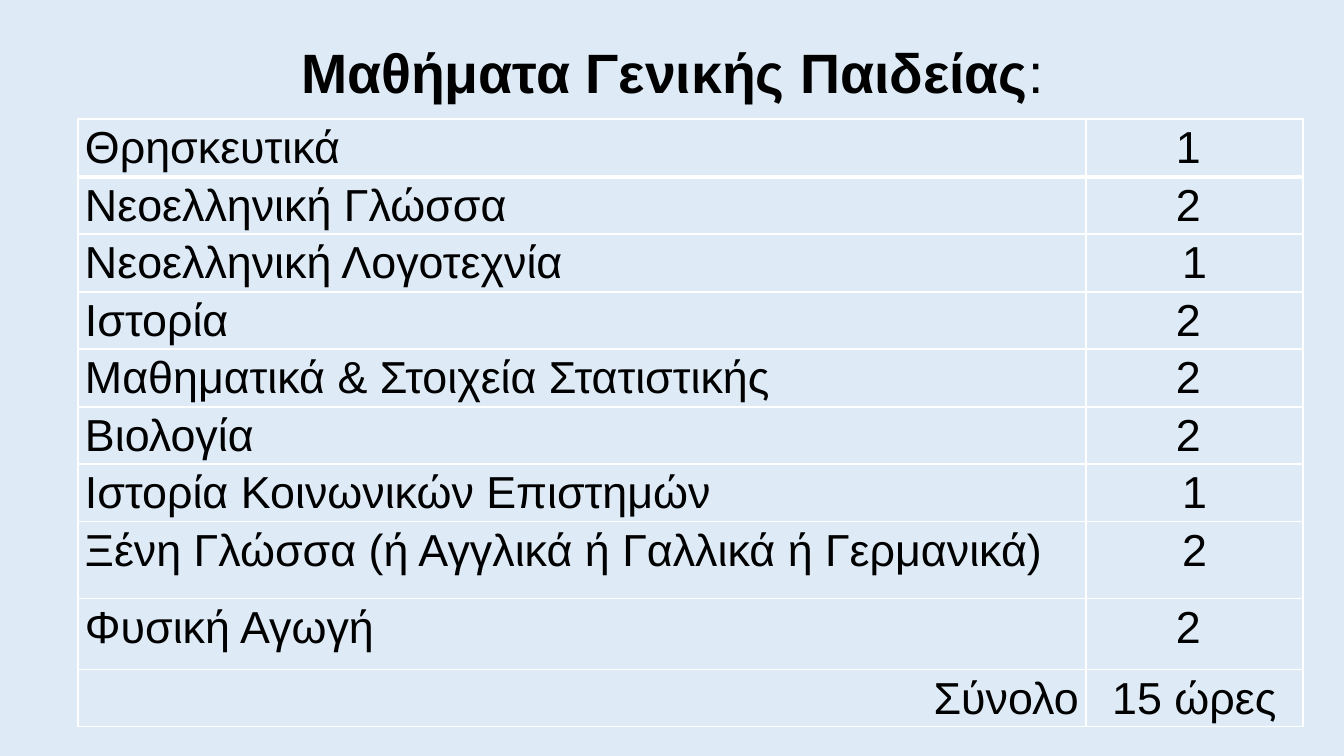
from dataclasses import dataclass

from lxml import etree
from pptx import Presentation
from pptx.dml.color import RGBColor
from pptx.enum.text import MSO_ANCHOR, MSO_AUTO_SIZE, PP_ALIGN
from pptx.oxml.ns import qn
from pptx.util import Emu, Pt

LEFT, CENTER, RIGHT = PP_ALIGN.LEFT, PP_ALIGN.CENTER, PP_ALIGN.RIGHT
MIDDLE = MSO_ANCHOR.MIDDLE
NO_AUTOFIT = MSO_AUTO_SIZE.NONE

SLIDE_W, SLIDE_H = 1344, 756
EMU_PER_PX = 12192000 / SLIDE_W

BACKGROUND = RGBColor(0xDE, 0xEB, 0xF7)
INK = RGBColor(0x00, 0x00, 0x00)
RULE = RGBColor(0xFF, 0xFF, 0xFF)
FONT = "Arial"

THIN, THICK = 1, 3
COLUMN_WIDTHS = (1008, 217)
CELL_INSET = 7


@dataclass
class Course:
    name: str
    hours: str
    height: int
    align: PP_ALIGN = LEFT


COURSES = [
    Course("Θρησκευτικά", "1 ", 58),
    Course("Νεοελληνική Γλώσσα", "2 ", 57),
    Course("Νεοελληνική Λογοτεχνία", "1", 58),
    Course("Ιστορία", "2 ", 57),
    Course("Μαθηματικά & Στοιχεία Στατιστικής", "2 ", 58),
    Course("Βιολογία", "2 ", 57),
    Course("Ιστορία Κοινωνικών Επιστημών", "1", 58),
    Course("Ξένη Γλώσσα (ή Αγγλικά ή Γαλλικά ή Γερμανικά)", "2", 77),
    Course("Φυσική Αγωγή", "2 ", 71),
    Course("Σύνολο", "15 ώρες", 57, RIGHT),
]


def px(n: int) -> Emu:
    return Emu(round(n * EMU_PER_PX))


def add_run(p, text: str, size: float, bold: bool = False) -> None:
    r = p.add_run()
    r.text = text
    r.font.name = FONT
    r.font.size = Pt(size)
    r.font.bold = bold
    r.font.color.rgb = INK


def set_borders(cell, top: int, bottom: int) -> None:
    tc_pr = cell._tc.get_or_add_tcPr()
    widths = {"a:lnL": THIN, "a:lnR": THIN, "a:lnT": top, "a:lnB": bottom}
    for tag, width in widths.items():
        ln = etree.SubElement(tc_pr, qn(tag), w=str(Pt(width)))
        fill = etree.SubElement(ln, qn("a:solidFill"))
        etree.SubElement(fill, qn("a:srgbClr"), val=str(RULE))


def fill_cell(cell, text: str, align: PP_ALIGN) -> None:
    cell.margin_left = cell.margin_right = px(CELL_INSET)
    cell.margin_top = cell.margin_bottom = 0
    p = cell.text_frame.paragraphs[0]
    p.alignment = align
    p.line_spacing = 1.07
    add_run(p, text, 32)


def add_title(s) -> None:
    title = s.shapes.title
    title.left, title.top, title.width, title.height = map(px, (93, 40, 1159, 71))
    tf = title.text_frame
    tf.auto_size = NO_AUTOFIT
    tf.vertical_anchor = MIDDLE
    p = tf.paragraphs[0]
    p.alignment = CENTER
    p.line_spacing = 0.9
    add_run(p, "Μαθήματα Γενικής Παιδείας", 39.6, bold=True)
    add_run(p, ":", 39.6)


def add_timetable(s) -> None:
    height = sum(course.height for course in COURSES)
    table = s.shapes.add_table(len(COURSES), len(COLUMN_WIDTHS), px(78), px(119),
                               px(sum(COLUMN_WIDTHS)), px(height)).table
    table.first_row = False
    table.horz_banding = False
    for column, width in zip(table.columns, COLUMN_WIDTHS):
        column.width = px(width)
    for i, (row, course) in enumerate(zip(table.rows, COURSES)):
        row.height = px(course.height)
        fill_cell(row.cells[0], course.name, course.align)
        fill_cell(row.cells[1], course.hours, CENTER)
        for cell in row.cells:
            # A thick rule separates the first row from the second
            set_borders(cell, THICK if i == 1 else THIN, THICK if i == 0 else THIN)
            cell.fill.background()


def main() -> None:
    prs = Presentation()
    prs.slide_width, prs.slide_height = px(SLIDE_W), px(SLIDE_H)
    s = prs.slides.add_slide(prs.slide_layouts.get_by_name("Title Only"))

    # Background
    s.background.fill.solid()
    s.background.fill.fore_color.rgb = BACKGROUND

    # Title and weekly hours
    add_title(s)
    add_timetable(s)
    prs.save("out.pptx")


if __name__ == "__main__":
    main()
